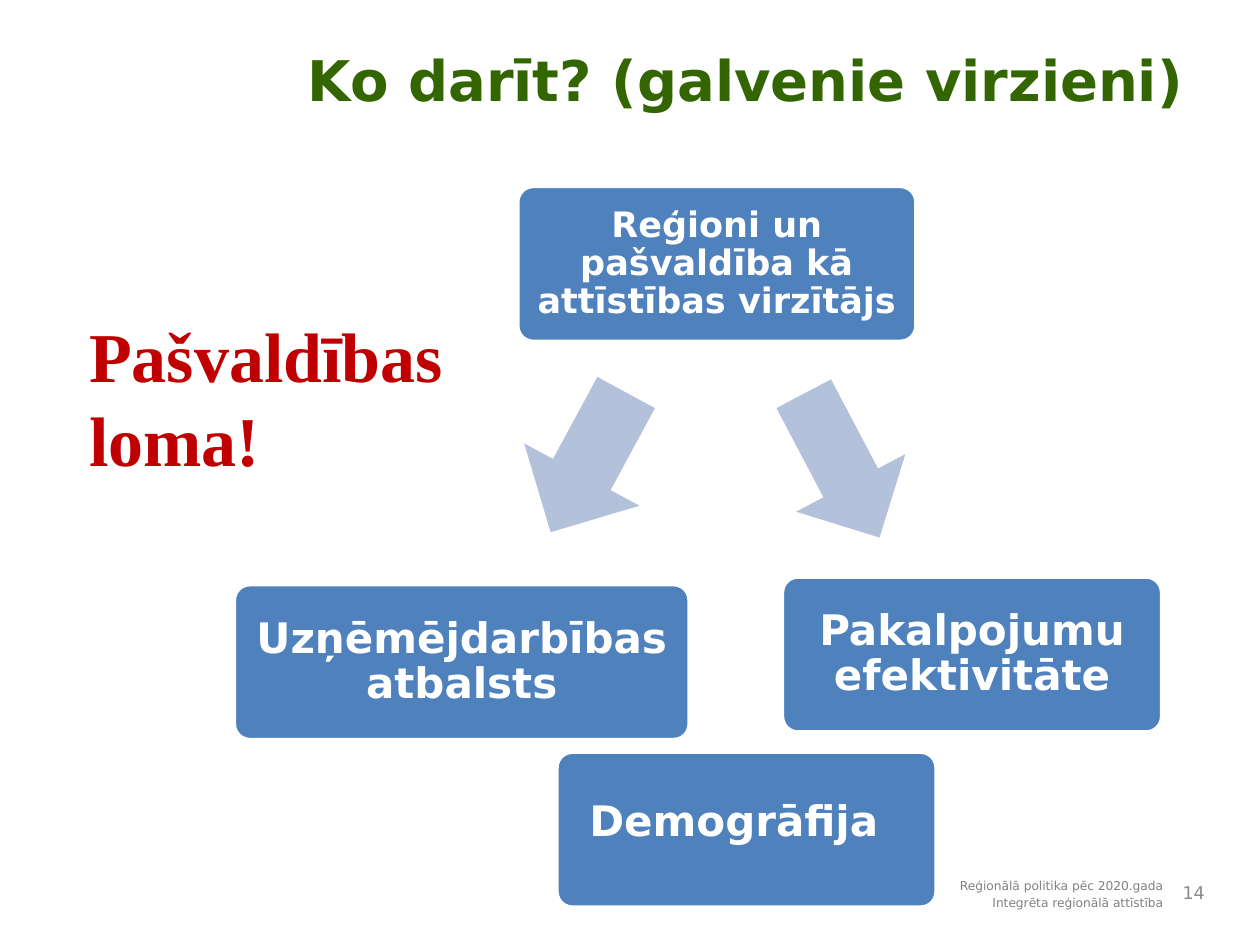
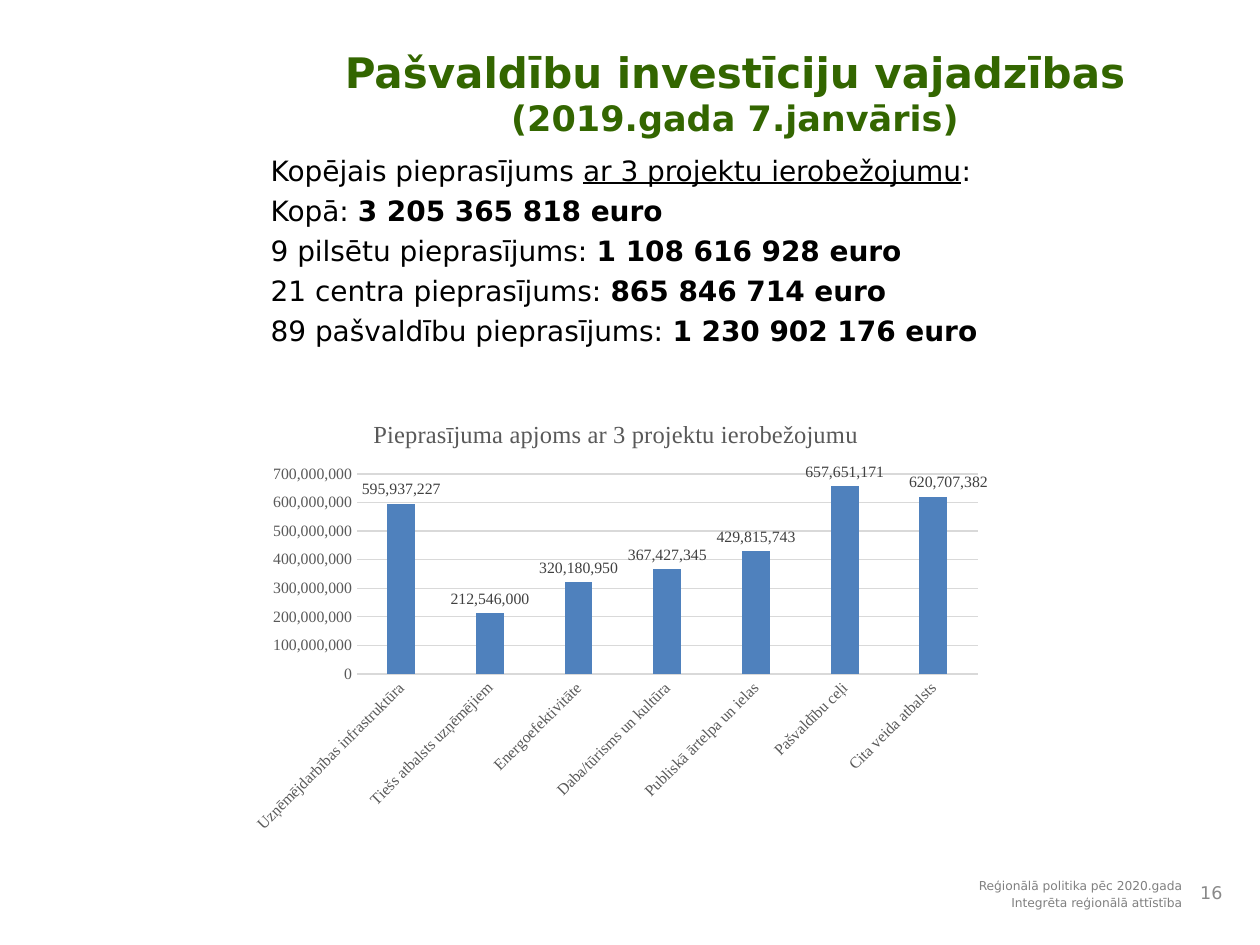
from dataclasses import dataclass

from lxml.etree import SubElement
from pptx import Presentation
from pptx.chart.data import CategoryChartData
from pptx.dml.color import RGBColor
from pptx.enum.chart import XL_CHART_TYPE, XL_LABEL_POSITION, XL_TICK_MARK
from pptx.enum.shapes import MSO_SHAPE
from pptx.enum.text import MSO_ANCHOR, PP_ALIGN
from pptx.oxml import parse_xml
from pptx.oxml.ns import nsdecls, qn
from pptx.shapes.autoshape import Shape
from pptx.slide import Slide
from pptx.util import Emu, Inches, Pt

SANS, SERIF = "DejaVu Sans", "Times New Roman"
GREEN, BLUE, PALE_BLUE, RED = "336600", "4F81BD", "B3C1DB", "C00000"
BLACK, WHITE, GRID_GREY = "000000", "FFFFFF", "D9D9D9"
FOOTER_GREY, NUMBER_GREY, AXIS_GREY, LABEL_GREY = "808080", "898989", "595959", "404040"
COLUMNS, ROWS = 100, 75
SLIDE_WIDTH, SLIDE_HEIGHT = Inches(10), Inches(7.5)


@dataclass(frozen=True)
class Area:
    column: float
    row: float
    columns: float
    rows: float

    def box(self) -> tuple[Emu, Emu, Emu, Emu]:
        across, down = SLIDE_WIDTH / COLUMNS, SLIDE_HEIGHT / ROWS
        return (Emu(round(self.column * across)), Emu(round(self.row * down)),
                Emu(round(self.columns * across)), Emu(round(self.rows * down)))


@dataclass(frozen=True)
class Style:
    size: float
    color: str
    font: str = SANS
    bold: bool = False
    underline: bool = False


@dataclass(frozen=True)
class Span:
    text: str
    style: Style


@dataclass(frozen=True)
class Direction:
    text: str
    area: Area
    size: int = 24
    shift_left: float = 0
    shift_up: float = 0


@dataclass(frozen=True)
class Arrow:
    area: Area
    rotation: float


@dataclass(frozen=True)
class Footer:
    area: Area
    number: int
    number_area: Area


BODY = Style(16, BLACK)
BODY_BOLD = Style(16, BLACK, bold=True)
FOOTER_LINES = ("Reģionālā politika pēc 2020.gada", "Integrēta reģionālā attīstība")

DIRECTIONS = (
    Direction("Reģioni un pašvaldība kā attīstības virzītājs", Area(41.1, 14.8, 31.6, 12.3), 20),
    Direction("Pakalpojumu efektivitāte", Area(62.1, 45.8, 30.1, 12.3)),
    Direction("Uzņēmējdarbības atbalsts", Area(18.6, 46.4, 36.1, 12.3)),
    Direction("Demogrāfija", Area(44.2, 59.7, 30.1, 12.3), shift_left=0.2, shift_up=0.11),
)
ARROWS = (
    Arrow(Area(61.9, 30.5, 9.8, 12.9), 332.2),
    Arrow(Area(41.5, 30.4, 10.4, 12.6), 28.4),
)
REQUESTS = (
    ("Kopā: ", "3 205 365 818 euro"),
    ("9 pilsētu pieprasījums: ", "1 108 616 928 euro"),
    ("21 centra pieprasījums: ", "865 846 714 euro"),
    ("89 pašvaldību pieprasījums: ", "1 230 902 176 euro"),
)
DEMAND = {
    "Uzņēmējdarbības infrastruktūra": 595937227,
    "Tiešs atbalsts uzņēmējiem": 212546000,
    "Energoefektivitāte": 320180950,
    "Daba/tūrisms un kultūra": 367427345,
    "Publiskā ārtelpa un ielas": 429815743,
    "Pašvaldību ceļi": 657651171,
    "Cita veida atbalsts": 620707382,
}


def rgb(value: str) -> RGBColor:
    return RGBColor.from_string(value)


def apply_style(font, style: Style) -> None:
    font.size = Pt(style.size)
    font.name = style.font
    font.bold = style.bold
    font.underline = style.underline
    font.color.rgb = rgb(style.color)


def add_text(slide: Slide, area: Area, lines: list[list[Span]],
             align: PP_ALIGN = PP_ALIGN.LEFT, anchor: MSO_ANCHOR = MSO_ANCHOR.TOP) -> None:
    frame = slide.shapes.add_textbox(*area.box()).text_frame
    frame.word_wrap = True
    frame.vertical_anchor = anchor
    for index, spans in enumerate(lines):
        paragraph = frame.add_paragraph() if index else frame.paragraphs[0]
        paragraph.alignment = align
        if index:
            paragraph.space_before = Pt(round(spans[0].style.size * 0.23, 1))
        for span in spans:
            run = paragraph.add_run()
            run.text = span.text
            apply_style(run.font, span.style)


def add_title(slide: Slide, area: Area, *parts: tuple[str, int]) -> None:
    spans = [Span(text, Style(size, GREEN, bold=True)) for text, size in parts]
    add_text(slide, area, [spans], PP_ALIGN.CENTER)


def add_footer(slide: Slide, footer: Footer) -> None:
    lines = [[Span(line, Style(7, FOOTER_GREY))] for line in FOOTER_LINES]
    add_text(slide, footer.area, lines, PP_ALIGN.RIGHT)
    number = [[Span(str(footer.number), Style(10, NUMBER_GREY))]]
    add_text(slide, footer.number_area, number, PP_ALIGN.RIGHT, MSO_ANCHOR.MIDDLE)


def add_filled(slide: Slide, preset: MSO_SHAPE, area: Area, color: str) -> Shape:
    shape = slide.shapes.add_shape(preset, *area.box())
    shape.shadow.inherit = False
    shape.fill.solid()
    shape.fill.fore_color.rgb = rgb(color)
    shape.line.fill.background()
    return shape


def add_direction(slide: Slide, direction: Direction) -> None:
    card = add_filled(slide, MSO_SHAPE.ROUNDED_RECTANGLE, direction.area, BLUE)
    card.adjustments[0] = 0.1
    card.line.color.rgb = rgb(WHITE)
    card.line.width = Pt(2)
    frame = card.text_frame
    frame.word_wrap = True
    frame.vertical_anchor = MSO_ANCHOR.MIDDLE
    frame.margin_left = frame.margin_top = Inches(0.1)
    frame.margin_right = Inches(0.1 + direction.shift_left)
    frame.margin_bottom = Inches(0.1 + direction.shift_up)
    paragraph = frame.paragraphs[0]
    paragraph.text = direction.text
    paragraph.alignment = PP_ALIGN.CENTER
    paragraph.line_spacing = 0.9
    apply_style(paragraph.runs[0].font, Style(direction.size, WHITE, bold=True))


def add_arrow(slide: Slide, arrow: Arrow) -> None:
    add_filled(slide, MSO_SHAPE.DOWN_ARROW, arrow.area, PALE_BLUE).rotation = arrow.rotation


def manual_layout(target: str = "", **shares: float):
    layout = parse_xml(f"<c:layout {nsdecls('c')}><c:manualLayout/></c:layout>")
    manual = layout[0]
    if target:
        SubElement(manual, qn("c:layoutTarget")).set("val", target)
        for mode in ("xMode", "yMode"):
            SubElement(manual, qn(f"c:{mode}")).set("val", "edge")
    for name, share in shares.items():
        SubElement(manual, qn(f"c:{name}")).set("val", str(share))
    return layout


def add_demand_chart(slide: Slide, area: Area) -> None:
    demand = CategoryChartData(number_format="#,##0")
    demand.categories = list(DEMAND)
    demand.add_series("Series 1", list(DEMAND.values()))
    chart = slide.shapes.add_chart(XL_CHART_TYPE.COLUMN_CLUSTERED, *area.box(), demand).chart
    apply_style(chart.font, Style(10, BLACK, SERIF))
    chart.has_legend = False
    chart.has_title = True
    heading = chart.chart_title.text_frame.paragraphs[0]
    heading.text = "Pieprasījuma apjoms ar 3 projektu ierobežojumu"
    apply_style(heading.runs[0].font, Style(14, AXIS_GREY, SERIF))
    chart.chart_title.include_in_layout = False

    plot = chart.plots[0]
    plot.gap_width, plot.overlap, plot.vary_by_categories = 219, -27, False
    bars = plot.series[0]
    bars.format.fill.solid()
    bars.format.fill.fore_color.rgb = rgb(BLUE)
    labels = bars.data_labels
    labels.show_value = True
    labels.number_format, labels.number_format_is_linked = "#,##0", False
    last_label = bars.points[len(DEMAND) - 1].data_label
    for label in (labels, last_label):
        label.position = XL_LABEL_POSITION.OUTSIDE_END
        apply_style(label.font, Style(9, LABEL_GREY, SERIF))

    categories, values = chart.category_axis, chart.value_axis
    for axis in (categories, values):
        axis.major_tick_mark = axis.minor_tick_mark = XL_TICK_MARK.NONE
        apply_style(axis.tick_labels.font, Style(9, AXIS_GREY, SERIF))
    values.minimum_scale, values.maximum_scale, values.major_unit = 0, 700000000, 100000000
    values.tick_labels.number_format = "#,##0"
    values.tick_labels.number_format_is_linked = False
    values.format.line.fill.background()
    for line in (categories.format.line, values.major_gridlines.format.line):
        line.color.rgb = rgb(GRID_GREY)
        line.width = Pt(0.75)

    root = chart.element
    root.find(f".//{qn('c:catAx')}/{qn('c:txPr')}/{qn('a:bodyPr')}").set("rot", "-2700000")
    root.find(f".//{qn('c:dLbl')}").insert(1, manual_layout(x=0.02, y=0))
    plot_area = root.find(f".//{qn('c:plotArea')}")
    for layout in plot_area.findall(qn("c:layout")):
        plot_area.remove(layout)
    plot_area.insert(0, manual_layout("inner", x=0.156, y=0.171, w=0.824, h=0.451))


def build_directions(slide: Slide) -> None:
    add_footer(slide, Footer(Area(53.3, 69.2, 40, 3.3), 14, Area(91.6, 69.2, 5, 3.3)))
    add_title(slide, Area(23.1, 3.1, 72.2, 6.9), ("Ko darīt? (galvenie virzieni)", 32))
    for direction in DIRECTIONS:
        add_direction(slide, direction)
    for arrow in ARROWS:
        add_arrow(slide, arrow)
    role = Span("Pašvaldības loma!", Style(40, RED, SERIF, bold=True))
    add_text(slide, Area(6.1, 24.3, 31.7, 14.5), [[role]])


def build_investments(slide: Slide) -> None:
    add_title(slide, Area(25, 3.2, 66.7, 11.3),
              ("Pašvaldību investīciju vajadzības ", 24), ("(2019.gada 7.janvāris)", 20))
    lines = [[Span("Kopējais pieprasījums ", BODY),
              Span("ar 3 projektu ierobežojumu", Style(16, BLACK, underline=True)),
              Span(":", BODY)]]
    lines += [[Span(who, BODY), Span(amount, BODY_BOLD)] for who, amount in REQUESTS]
    add_text(slide, Area(20.5, 11.7, 71.2, 19.9), lines)
    add_footer(slide, Footer(Area(54.8, 69.2, 40, 3.3), 16, Area(93.3, 69.2, 4.7, 3.3)))
    add_demand_chart(slide, Area(19, 31.6, 59.8, 35.2))


def main() -> None:
    deck = Presentation()
    deck.slide_width, deck.slide_height = SLIDE_WIDTH, SLIDE_HEIGHT
    for build in (build_directions, build_investments):
        build(deck.slides.add_slide(deck.slide_layouts[6]))
    deck.save("out.pptx")


if __name__ == "__main__":
    main()
